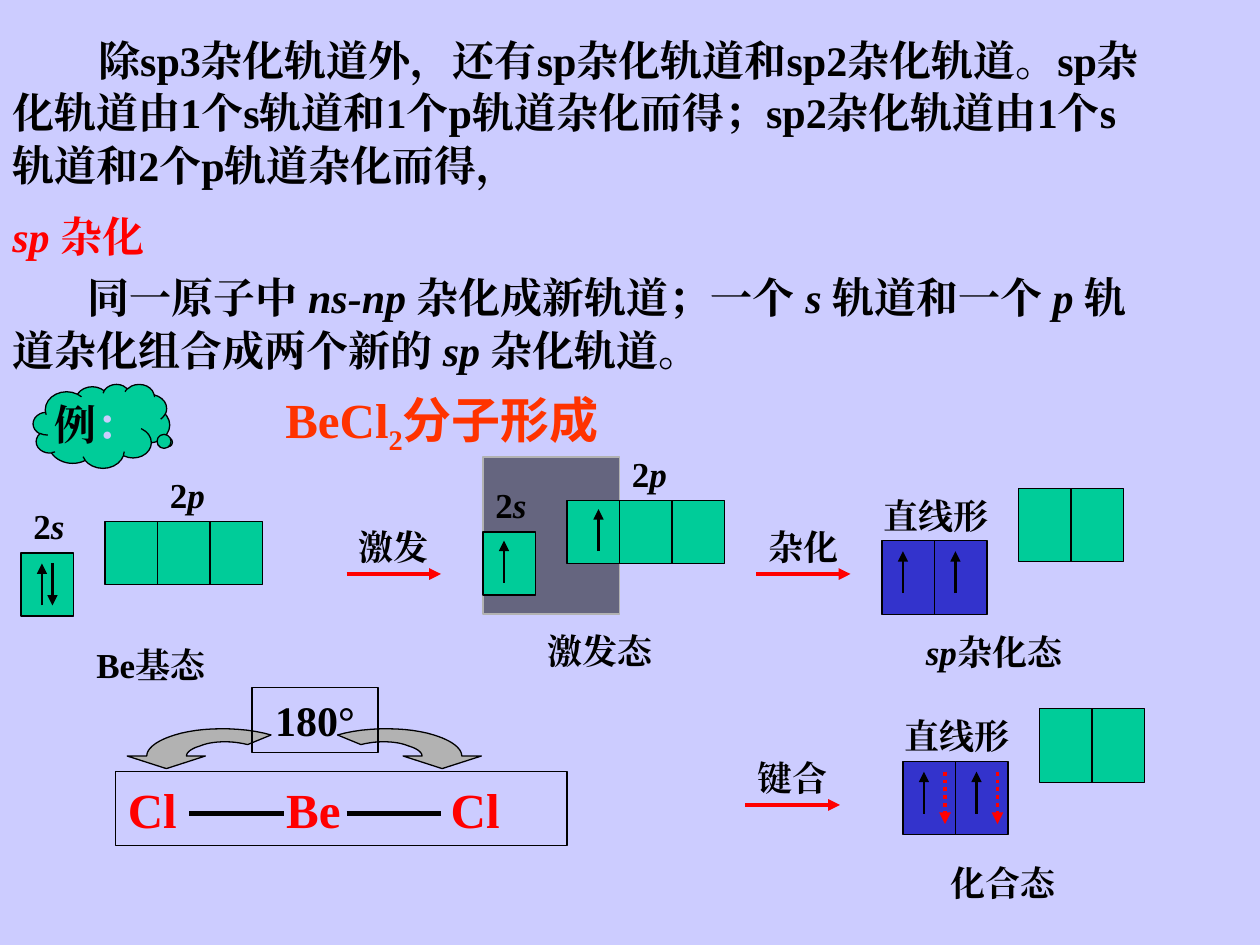
"""Build the slide on sp hybridisation and the forming of BeCl2."""
from dataclasses import dataclass

from lxml import etree
from pptx import Presentation
from pptx.dml.color import RGBColor
from pptx.enum.dml import MSO_LINE
from pptx.enum.shapes import MSO_CONNECTOR, MSO_SHAPE
from pptx.enum.text import MSO_ANCHOR, PP_ALIGN
from pptx.oxml.ns import qn
from pptx.util import Pt

RECTANGLE, CLOUD = MSO_SHAPE.RECTANGLE, MSO_SHAPE.CLOUD_CALLOUT
STRAIGHT, DOTTED = MSO_CONNECTOR.STRAIGHT, MSO_LINE.ROUND_DOT
LEFT, CENTER = PP_ALIGN.LEFT, PP_ALIGN.CENTER
TOP, MIDDLE = MSO_ANCHOR.TOP, MSO_ANCHOR.MIDDLE
SERIF, SANS = "Times New Roman", "Noto Sans CJK SC"
BLACK, RED, ORANGE, GRAY = "000000", "FF0000", "FF3300", "B2B2B2"
GREEN, BLUE, PALE = "00CC99", "3333CC", "CCCCFF"
CELL_WIDTH, SPIN_LENGTH = 30, 24
ARROW_AXIS = 173.9


@dataclass(frozen=True)
class Span:
    """A stretch of text with one format."""
    text: str
    italic: bool = False
    color: str = BLACK
    font: str = SERIF
    baseline: int = 0


@dataclass(frozen=True)
class Orbitals:
    """A row of touching orbital cells."""
    left: float
    top: float
    count: int
    height: float = 36
    fill: str = GREEN


@dataclass(frozen=True)
class Label:
    """A small caption."""
    left: float
    top: float
    width: float
    spans: tuple[Span, ...]
    align: int = LEFT


@dataclass(frozen=True)
class Stroke:
    """A straight line, with or without an arrowhead."""
    start: tuple[float, float]
    end: tuple[float, float]
    color: str = BLACK
    width: float = 1.5
    dotted: bool = False
    head: bool = True


def rgb(value: str) -> RGBColor:
    """Turn a hex string into a colour."""
    return RGBColor.from_string(value)


def add_span(para, text: str, *, size: float, color: str, italic: bool, font: str, baseline: int) -> None:
    """Append formatted bold text to a paragraph."""
    run = para.add_run()
    run.text = text
    run.font.size, run.font.name = Pt(size), font
    run.font.bold, run.font.italic = True, italic
    run.font.color.rgb = rgb(color)
    properties = run.font._element
    etree.SubElement(properties, qn("a:ea")).set("typeface", font)
    if baseline:
        properties.set("baseline", str(baseline * 1000))


def fill_para(para, spans: tuple[Span, ...], size: float, align: int = LEFT) -> None:
    """Write spans into a paragraph."""
    para.alignment = align
    for span in spans:
        add_span(para, span.text, size=size, color=span.color, italic=span.italic,
                 font=span.font, baseline=span.baseline)


def indent(para, amount: float) -> None:
    """Indent the first line of a paragraph."""
    para._p.get_or_add_pPr().set("indent", str(Pt(amount)))


def add_text(page, bounds: tuple[float, ...], spans: tuple[Span, ...], size: float, align: int = LEFT):
    """Add a wrapping text box and return its first paragraph."""
    box = page.shapes.add_textbox(*map(Pt, bounds))
    box.text_frame.word_wrap = True
    box.text_frame.vertical_anchor = TOP
    para = box.text_frame.paragraphs[0]
    fill_para(para, spans, size, align)
    return para


def paint(shape, fill: str | None, line: str = BLACK, width: float = 0.75) -> None:
    """Set the fill and outline of a shape."""
    shape.shadow.inherit = False
    if fill:
        shape.fill.solid()
        shape.fill.fore_color.rgb = rgb(fill)
    else:
        shape.fill.background()
    shape.line.color.rgb, shape.line.width = rgb(line), Pt(width)


def add_box(page, bounds: tuple[float, ...], fill: str | None = None, kind: int = RECTANGLE):
    """Add a painted preset shape."""
    box = page.shapes.add_shape(kind, *map(Pt, bounds))
    paint(box, fill)
    box.text_frame.vertical_anchor = MIDDLE
    box.text_frame.word_wrap = False
    return box


def add_orbitals(page, row: Orbitals) -> None:
    """Draw a row of orbital cells."""
    for index in range(row.count):
        add_box(page, (row.left + index * CELL_WIDTH, row.top, CELL_WIDTH, row.height), row.fill)


def add_stroke(page, stroke: Stroke) -> None:
    """Draw a straight line."""
    line = page.shapes.add_connector(STRAIGHT, *map(Pt, stroke.start + stroke.end))
    line.line.color.rgb, line.line.width = rgb(stroke.color), Pt(stroke.width)
    if stroke.dotted:
        line.line.dash_style = DOTTED
    if stroke.head:
        etree.SubElement(line.line._get_or_add_ln(), qn("a:tailEnd")).set("type", "triangle")
    etree.SubElement(line._element.spPr, qn("a:effectLst"))


def curve(*controls: tuple[float, float], steps: int = 12) -> list[tuple[float, float]]:
    """Sample a cubic curve given by four points."""
    weights = [((1 - t) ** 3, 3 * t * (1 - t) ** 2, 3 * t * t * (1 - t), t ** 3)
               for t in (step / steps for step in range(steps + 1))]
    return [tuple(sum(w * point[axis] for w, point in zip(row, controls)) for axis in (0, 1))
            for row in weights]


def add_curved_arrow(page, side: int) -> None:
    """Draw a curved block arrow to the right (1) or left (-1) of the axis."""
    outline = [
        *curve((67.3, 432), (67.3, 429.8), (64.4, 427.7), (59.4, 426.2)),
        *curve((59.4, 426.2), (53, 423.5), (42, 423), (32.4, 425.5)),
        *curve((19, 420), (36, 415), (60, 415.5), (74, 420)),
        *curve((74, 420), (84, 423), (90, 427.5), (90, 432)),
        (101.2, 432), (78.8, 439.2), (56.5, 432)]
    points = [(Pt(ARROW_AXIS + side * x), Pt(y)) for x, y in outline]
    builder = page.shapes.build_freeform(*points[0])
    builder.add_line_segments(points[1:], close=True)
    paint(builder.convert_to_shape(), GRAY)


ORBITALS = (
    Orbitals(12, 316, 1), Orbitals(60, 298, 3), Orbitals(324, 286, 3), Orbitals(276, 304, 1),
    Orbitals(504, 309, 2, 42, BLUE), Orbitals(582, 279, 2, 42),
    Orbitals(516, 435, 2, 42, BLUE), Orbitals(594, 405, 2, 42))
S_ORBITAL = (Span("2"), Span("s", True))
P_ORBITAL = (Span("2"), Span("p", True))
LINEAR = (Span("直线形"),)
LABELS = (
    Label(12, 285, 36, S_ORBITAL), Label(90, 267, 36, P_ORBITAL),
    Label(276, 273, 36, S_ORBITAL), Label(354, 255, 36, P_ORBITAL),
    Label(48, 364, 90, (Span("Be基态"),)), Label(306, 356, 90, (Span("激发态"),)),
    Label(498, 279, 84, LINEAR), Label(510, 405, 84, LINEAR),
    Label(522, 357, 108, (Span("sp", True), Span("杂化态"))),
    Label(528, 489, 90, (Span("化合态"),), CENTER),
    Label(192, 297, 66, (Span("激发"),), CENTER), Label(426, 297, 66, (Span("杂化"),), CENTER),
    Label(420, 429, 66, (Span("键合"),), CENTER))
SPINS_UP = ((24, 322), (288, 309), (342, 291), (516, 315), (546, 315), (528, 441), (558, 441))
STEPS = ((198, 328), (432, 328), (426, 460))
INTRO = "除sp3杂化轨道外，还有sp杂化轨道和sp2杂化轨道。sp杂化轨道由1个s轨道和1个p轨道杂化而得；sp2杂化轨道由1个s轨道和2个p轨道杂化而得，"
DEFINITION = (
    Span("同一原子中 "), Span("ns-np", True), Span(" 杂化成新轨道；一个 "), Span("s", True),
    Span(" 轨道和一个 "), Span("p ", True), Span("轨道杂化组合成两个新的 "),
    Span("sp ", True), Span("杂化轨道。"))
FORMULA = (Span("BeCl", color=ORANGE), Span("2", color=ORANGE, baseline=-25),
           Span("分子形成", color=ORANGE, font=SANS))


def add_paragraphs(page) -> None:
    """Write the introduction, the heading and the definition."""
    intro = add_text(page, (0, 15, 660, 94), (Span(INTRO),), 24)
    heading = add_text(page, (0, 117, 672, 99), (Span("sp", True, RED), Span(" 杂化", color=RED)), 24)
    definition = heading._parent.add_paragraph()
    fill_para(definition, DEFINITION, 24)
    definition.space_before = Pt(4.8)
    for para, amount in ((intro, 49), (definition, 43)):
        indent(para, amount)
        para.line_spacing = 1.04


def add_diagram(page) -> None:
    """Draw the orbital diagram from ground state to bonded state."""
    cloud = add_box(page, (19, 219.5, 78, 48), GREEN, CLOUD)
    cloud.adjustments[0], cloud.adjustments[1] = 0.48, 0.19
    fill_para(cloud.text_frame.paragraphs[0], (Span("例"), Span("：", color=PALE)), 24, CENTER)
    add_text(page, (156, 219, 195, 41), FORMULA, 28)
    shade = add_box(page, (276, 261, 78, 90), BLACK)
    paint(shade, BLACK, GRAY, 1)
    tint = shade.fill._xPr.find(qn("a:solidFill"))[0]
    etree.SubElement(tint, qn("a:alpha")).set("val", "50000")
    for row in ORBITALS:
        add_orbitals(page, row)
    for label in LABELS:
        add_text(page, (label.left, label.top, label.width, 31), label.spans, 20, label.align)
    for x, y in SPINS_UP:
        add_stroke(page, Stroke((x, y + SPIN_LENGTH), (x, y)))
    add_stroke(page, Stroke((30, 322), (30, 322 + SPIN_LENGTH)))
    for x in (540, 570):
        add_stroke(page, Stroke((x, 441), (x, 471), RED, 2.25, dotted=True))
    for x, y in STEPS:
        add_stroke(page, Stroke((x, y), (x + 54, y), RED, 2.25))


def add_molecule(page) -> None:
    """Draw the linear molecule and its bond angle."""
    molecule = add_box(page, (66, 441, 258, 42))
    molecule.text_frame.word_wrap = True
    para = molecule.text_frame.paragraphs[0]
    fill_para(para, (Span("Cl\tBe\tCl", color=RED),), 28)
    tabs = etree.SubElement(para._p.get_or_add_pPr(), qn("a:tabLst"))
    for position in (90.5, 184.5):
        etree.SubElement(tabs, qn("a:tab"), pos=str(Pt(position)), algn="l")
    for x in (108, 198):
        add_stroke(page, Stroke((x, 465), (x + 54, 465), width=3, head=False))
    for side in (1, -1):
        add_curved_arrow(page, side)
    angle = add_box(page, (144, 393, 72, 37))
    fill_para(angle.text_frame.paragraphs[0], (Span("180°"),), 24, CENTER)


def main() -> None:
    """Build and save the deck."""
    deck = Presentation()
    deck.slide_width, deck.slide_height = Pt(720), Pt(540)
    page = deck.slides.add_slide(deck.slide_layouts[6])
    page.background.fill.solid()
    page.background.fill.fore_color.rgb = rgb(PALE)
    add_paragraphs(page)
    add_diagram(page)
    add_molecule(page)
    deck.save("out.pptx")


if __name__ == "__main__":
    main()
